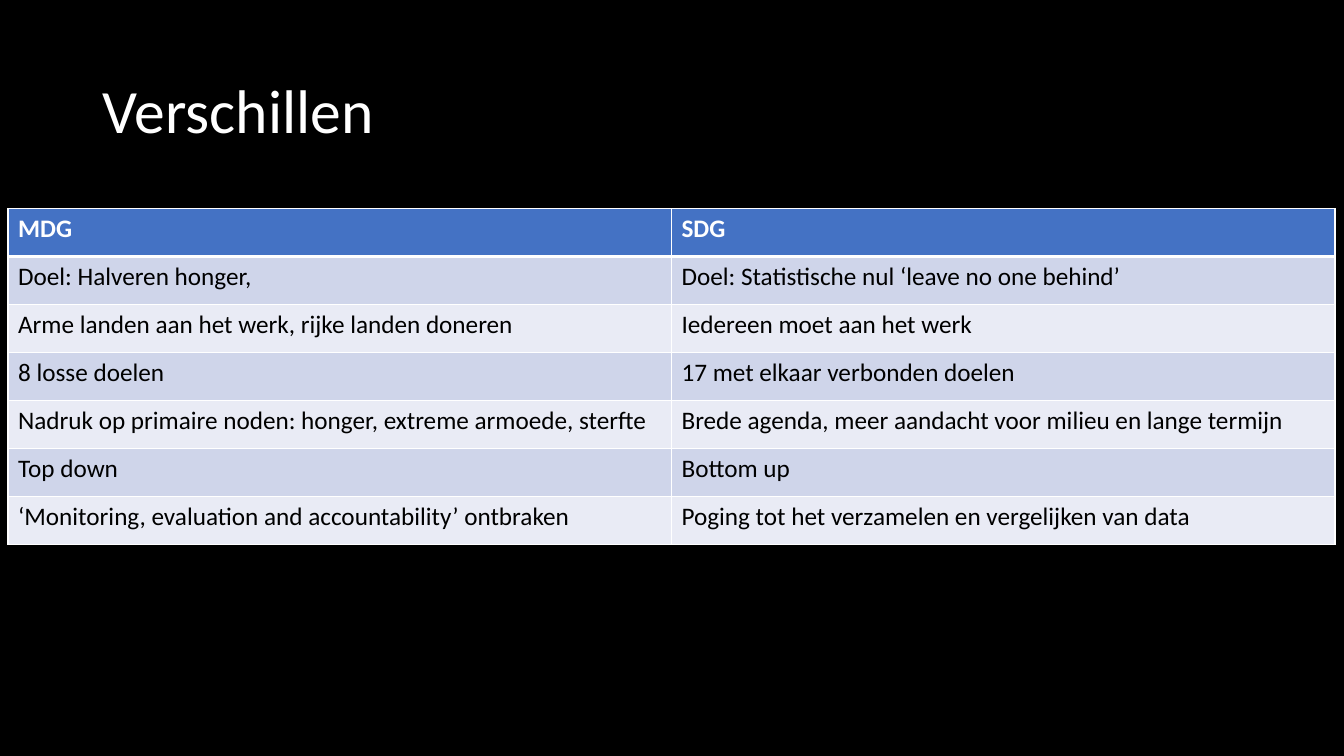
from dataclasses import dataclass
from lxml.etree import SubElement
from pptx import Presentation
from pptx.dml.color import RGBColor as Color
from pptx.enum.text import MSO_ANCHOR as Anchor, PP_ALIGN as Align
from pptx.oxml.ns import qn
from pptx.util import Inches, Pt


@dataclass(frozen=True)
class Theme:
    font: str = "Calibri"
    title_size: int = 44
    table_size: int = 18
    background: str = "000000"
    light: str = "FFFFFF"
    dark: str = "000000"
    header: str = "4472C4"
    bands: tuple = ("CFD5EA", "E9EBF5")
    thin_line: int = 1
    thick_line: int = 3


THEME = Theme()
SLIDE_WIDTH, SLIDE_HEIGHT = Inches(13.33), Inches(7.5)
COMPARISON = [
    ("MDG", "SDG"),
    ("Doel: Halveren honger,", "Doel: Statistische nul ‘leave no one behind’"),
    ("Arme landen aan het werk, rijke landen doneren", "Iedereen moet aan het werk"),
    ("8 losse doelen", "17 met elkaar verbonden doelen"),
    ("Nadruk op primaire noden: honger, extreme armoede, sterfte",
     "Brede agenda, meer aandacht voor milieu en lange termijn"),
    ("Top down", "Bottom up"),
    ("‘Monitoring, evaluation and accountability’ ontbraken",
     "Poging tot het verzamelen en vergelijken van data"),
]


def format_runs(paragraph, size, color, bold=False):
    for run in paragraph.runs:
        run.font.name = THEME.font
        run.font.size = Pt(size)
        run.font.bold = bold
        run.font.color.rgb = Color.from_string(color)


def add_title(slide, text):
    title = slide.shapes.title
    title.left, title.top = Inches(0.92), Inches(0.4)
    title.width, title.height = Inches(11.5), Inches(1.45)
    frame = title.text_frame
    frame.text = text
    frame.word_wrap = True
    frame.vertical_anchor = Anchor.MIDDLE
    paragraph = frame.paragraphs[0]
    paragraph.alignment = Align.LEFT
    paragraph.line_spacing = 0.9
    format_runs(paragraph, THEME.title_size, THEME.light)


def set_borders(cell, top, bottom):
    properties = cell._tc.get_or_add_tcPr()
    widths = {"L": THEME.thin_line, "R": THEME.thin_line, "T": top, "B": bottom}
    for side, width in widths.items():
        line = SubElement(properties, qn(f"a:ln{side}"), w=str(Pt(width)))
        fill = SubElement(line, qn("a:solidFill"))
        SubElement(fill, qn("a:srgbClr"), val=THEME.light)


def style_cell(cell, text, row):
    is_header = row == 0
    top = THEME.thick_line if row == 1 else THEME.thin_line
    bottom = THEME.thick_line if is_header else THEME.thin_line
    set_borders(cell, top, bottom)
    band = THEME.bands[(row - 1) % len(THEME.bands)]
    cell.fill.solid()
    cell.fill.fore_color.rgb = Color.from_string(THEME.header if is_header else band)
    cell.text_frame.text = text
    color = THEME.light if is_header else THEME.dark
    format_runs(cell.text_frame.paragraphs[0], THEME.table_size, color, is_header)


def add_comparison(slide, rows):
    frame = slide.shapes.add_table(
        len(rows), len(rows[0]),
        Inches(0.08), Inches(2.07), Inches(13.16), Inches(3.33))
    for row, texts in enumerate(rows):
        for column, text in enumerate(texts):
            style_cell(frame.table.cell(row, column), text, row)


def main():
    presentation = Presentation()
    presentation.slide_width = SLIDE_WIDTH
    presentation.slide_height = SLIDE_HEIGHT
    slide = presentation.slides.add_slide(presentation.slide_layouts.get_by_name("Title Only"))
    slide.background.fill.solid()
    slide.background.fill.fore_color.rgb = Color.from_string(THEME.background)
    add_comparison(slide, COMPARISON)
    add_title(slide, "Verschillen")
    presentation.save("out.pptx")


if __name__ == "__main__":
    main()
